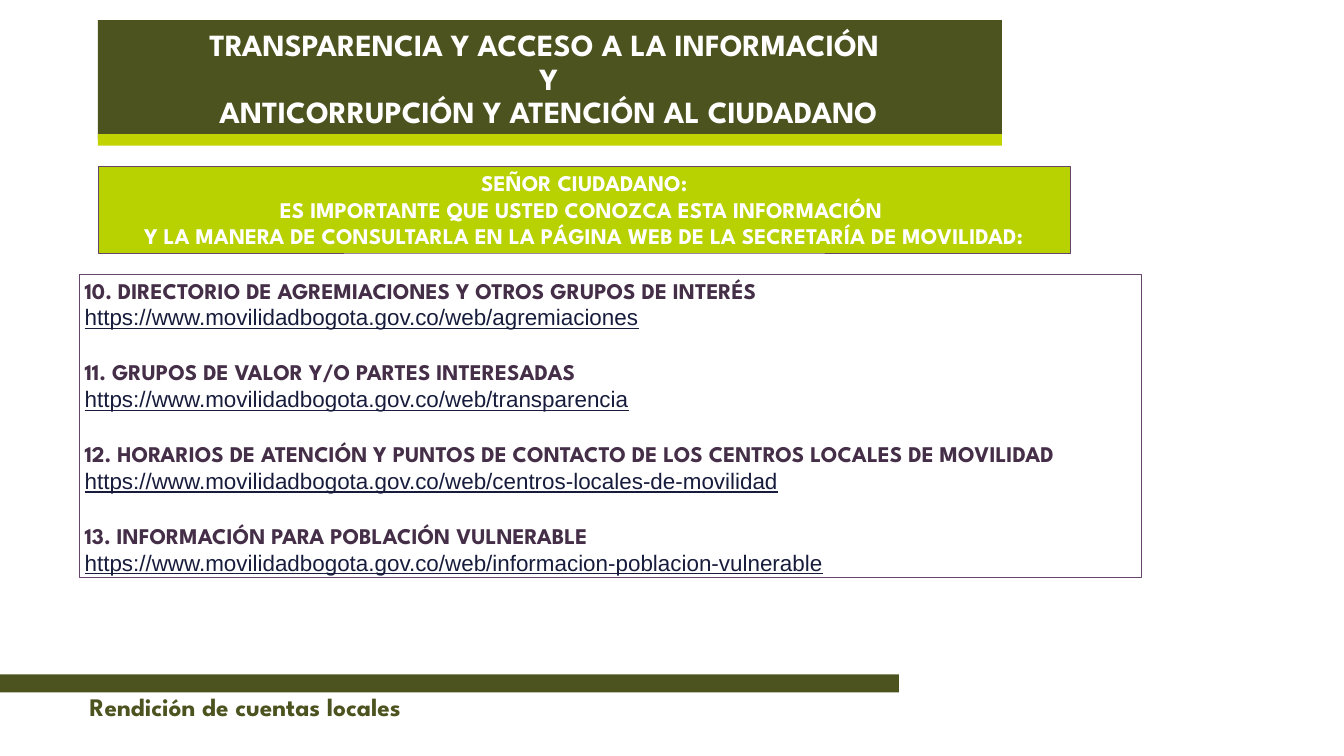
from lxml import etree
from pptx import Presentation
from pptx.dml.color import RGBColor
from pptx.enum.shapes import MSO_SHAPE
from pptx.enum.text import MSO_ANCHOR, MSO_AUTO_SIZE, PP_ALIGN
from pptx.oxml.ns import qn
from pptx.util import Inches, Pt

RECT = MSO_SHAPE.RECTANGLE
TOP, MIDDLE = MSO_ANCHOR.TOP, MSO_ANCHOR.MIDDLE
LEFT, CENTER = PP_ALIGN.LEFT, PP_ALIGN.CENTER
FIXED = MSO_AUTO_SIZE.NONE

OLIVE = RGBColor(0x4C, 0x53, 0x1E)
LIME = RGBColor(0xC1, 0xD3, 0x00)
GREEN = RGBColor(0xB8, 0xD1, 0x01)
PLUM = RGBColor(0x67, 0x45, 0x6B)
DARK = RGBColor(0x45, 0x2E, 0x47)
NAVY = RGBColor(0x17, 0x1C, 0x3C)
WHITE = RGBColor(0xFF, 0xFF, 0xFF)

HEAD_FONT = "League Spartan"
LINK_FONT = "Arial"
SITE = "https://www.movilidadbogota.gov.co/web/"

TITLE = ("TRANSPARENCIA Y ACCESO A LA INFORMACIÓN \vY\v"
         "ANTICORRUPCIÓN Y ATENCIÓN AL CIUDADANO")
NOTICE = [
    "SEÑOR CIUDADANO:",
    "ES IMPORTANTE QUE USTED CONOZCA ESTA INFORMACIÓN ",
    "Y LA MANERA DE CONSULTARLA EN LA PÁGINA WEB DE LA SECRETARÍA DE MOVILIDAD:",
]
TOPICS = [
    ("10. DIRECTORIO DE AGREMIACIONES Y OTROS GRUPOS DE INTERÉS", "agremiaciones"),
    ("11. GRUPOS DE VALOR Y/O PARTES INTERESADAS", "transparencia"),
    ("12. HORARIOS DE ATENCIÓN Y PUNTOS DE CONTACTO DE LOS CENTROS LOCALES DE MOVILIDAD",
     "centros-locales-de-movilidad"),
    ("13. INFORMACIÓN PARA POBLACIÓN VULNERABLE", "informacion-poblacion-vulnerable"),
]


def place(shape, x, y, w, h):
    shape.left, shape.top = Inches(x), Inches(y)
    shape.width, shape.height = Inches(w), Inches(h)


def add_bar(slide, x, y, w, h, fill, edge=None):
    bar = slide.shapes.add_shape(RECT, Inches(x), Inches(y), Inches(w), Inches(h))
    bar.shadow.inherit = False
    bar.fill.solid()
    bar.fill.fore_color.rgb = fill
    if edge:
        add_edge(bar, edge)
    else:
        bar.line.fill.background()
    return bar


def add_edge(shape, color):
    shape.line.color.rgb = color
    shape.line.width = Pt(0.75)


def set_frame(shape, pad=0.1, anchor=TOP):
    frame = shape.text_frame
    frame.word_wrap = True
    frame.auto_size = FIXED
    frame.vertical_anchor = anchor
    frame.margin_left = frame.margin_right = Inches(pad)
    frame.margin_top = frame.margin_bottom = Inches(pad / 2)
    return frame


def write(frame, text, size=32, font=HEAD_FONT, color=WHITE, bold=True,
          line=False, align=LEFT, space=1.0, before=0):
    para = frame.paragraphs[0]
    if para.runs:
        para = frame.add_paragraph()
    para.text = text
    para.alignment = align
    para.line_spacing = space
    para.space_before = Pt(before)
    for run in para.runs:
        style = run.font
        style.name, style.size = font, Pt(size)
        style.bold, style.underline = bold, line
        style.color.rgb = color
    return para


def drop_bullet(para):
    props = para._p.get_or_add_pPr()
    props.set("marL", "0")
    props.set("indent", "0")
    etree.SubElement(props, qn("a:buNone"))


def add_header(slide, x, y, w, h):
    band = add_bar(slide, x, y, w, h, OLIVE)
    title = slide.shapes.title
    place(title, x - 3.37, y - 0.26, w + 6.7, h + 0.54)
    band.element.addnext(title.element)
    frame = set_frame(title, pad=0.2, anchor=MIDDLE)
    write(frame, TITLE, size=44, align=CENTER, space=0.9)
    add_bar(slide, x, y + h - 0.1, w, 0.23, LIME)


def add_notice(slide, x, y, w, h):
    frame = set_frame(add_bar(slide, x, y, w, h, GREEN, PLUM))
    for text in NOTICE:
        write(frame, text, align=CENTER)


def add_topics(slide, x, y, w, h):
    body = slide.placeholders[1]
    place(body, x, y, w, h)
    add_edge(body, PLUM)
    frame = set_frame(body)
    for i, (name, page) in enumerate(TOPICS):
        drop_bullet(write(frame, name, color=DARK, before=40 if i else 0))
        drop_bullet(write(frame, SITE + page, font=LINK_FONT, color=NAVY,
                          bold=False, line=True))


def add_footer(slide, x, y, w, h):
    add_bar(slide, x, y, w, h, OLIVE)
    box = slide.shapes.add_textbox(Inches(x + 1.58), Inches(y + h),
                                   Inches(19.28), Inches(0.6))
    frame = set_frame(box, pad=0.2)
    write(frame, "Rendición de cuentas locales", size=36, color=OLIVE, space=0.8)


def main():
    deck = Presentation()
    deck.slide_width, deck.slide_height = Inches(26.67), Inches(15)
    slide = deck.slides.add_slide(deck.slide_layouts[1])
    add_header(slide, 1.94, 0.4, 17.94, 2.36)
    add_notice(slide, 1.95, 3.3, 19.29, 1.72)
    add_topics(slide, 1.58, 5.44, 21.07, 6.02)
    add_footer(slide, 0, 13.38, 17.84, 0.36)
    deck.save("out.pptx")


if __name__ == "__main__":
    main()
